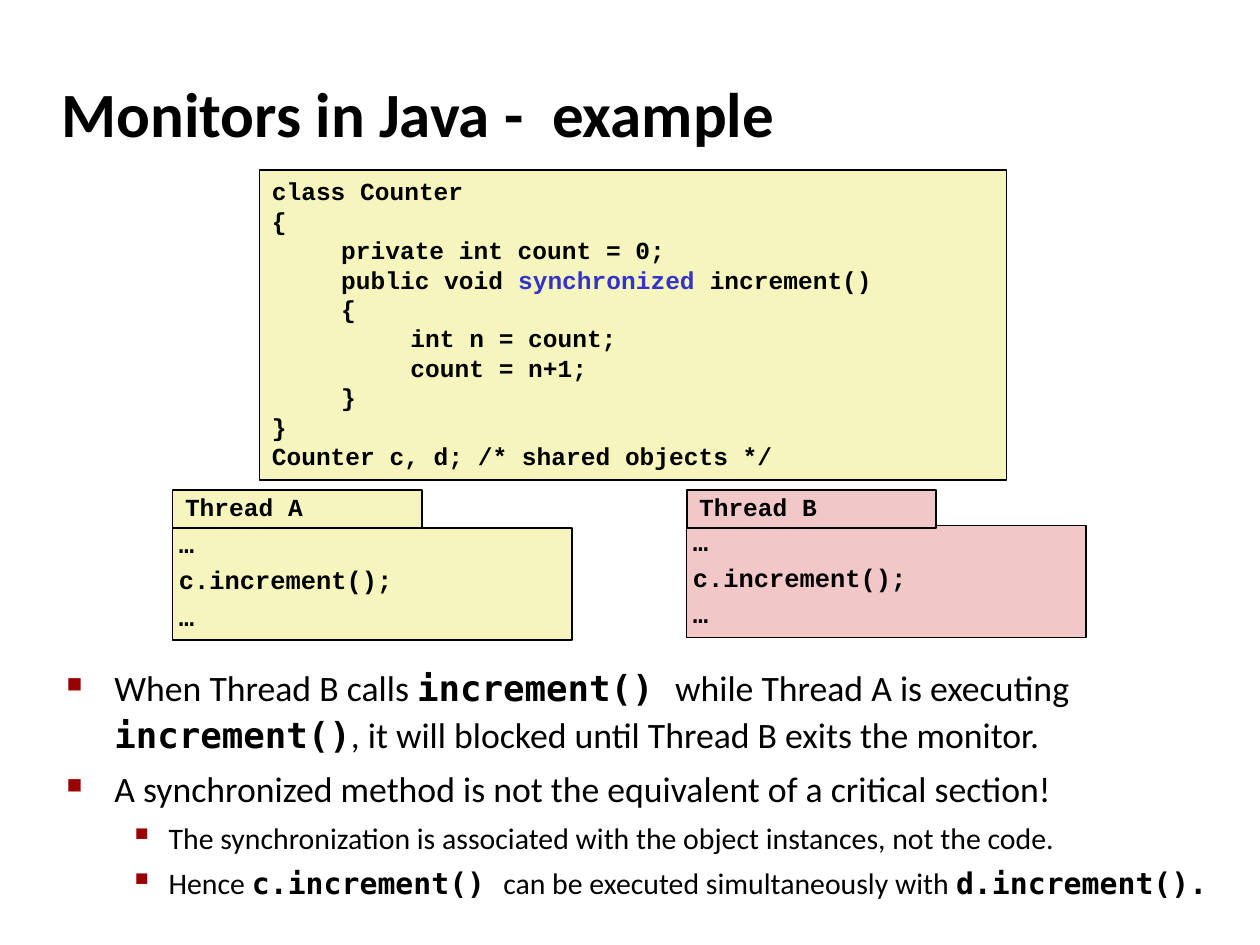
from lxml import etree
from pptx import Presentation
from pptx.dml.color import RGBColor
from pptx.enum.shapes import MSO_SHAPE
from pptx.enum.text import MSO_ANCHOR, PP_ALIGN
from pptx.oxml.ns import qn
from pptx.util import Inches, Pt

RECTANGLE = MSO_SHAPE.RECTANGLE
TOP, MIDDLE = MSO_ANCHOR.TOP, MSO_ANCHOR.MIDDLE
LEFT = PP_ALIGN.LEFT
COLORS = {
    "ink": "000000",
    "keyword": "3333CC",
    "bullet": "990000",
    "yellow": "F6F5BD",
    "pink": "F1C7C7",
}
CODE_FONT = "Courier New"

deck = Presentation()
deck.slide_width, deck.slide_height = Inches(10), Inches(7.5)
COL = deck.slide_width // 100
ROW = deck.slide_height // 75
page = deck.slides.add_slide(deck.slide_layouts[6])


def add_box(left, top, width, height, fill=None, line=0.75, inset=1, anchor=TOP):
    place = (round(left * COL), round(top * ROW), round(width * COL), round(height * ROW))
    if fill:
        box = page.shapes.add_shape(RECTANGLE, *place)
        box.shadow.inherit = False
        box.fill.solid()
        box.fill.fore_color.rgb = RGBColor.from_string(COLORS[fill])
        box.line.color.rgb = RGBColor.from_string(COLORS["ink"])
        box.line.width = Pt(line)
    else:
        box = page.shapes.add_textbox(*place)
    frame = box.text_frame
    frame.word_wrap = True
    frame.vertical_anchor = anchor
    frame.margin_left = frame.margin_right = round(inset * COL)
    frame.margin_top = frame.margin_bottom = ROW // 2
    return box


def add_line(box, text, size=14, font=CODE_FONT, bold=True, spacing=1.0, before=0,
             accent_font=None, accent_color="ink", bullet=None, tabs=()):
    frame = box.text_frame
    para = frame.paragraphs[0]
    if para.runs:
        para = frame.add_paragraph()
    para.alignment = LEFT
    para.line_spacing = spacing
    para.space_before = Pt(before)
    props = para._p.get_or_add_pPr()
    if bullet:
        level, mark, scale, margin, hang = bullet
        para.level = level
        props.set("marL", str(round(margin * COL)))
        props.set("indent", str(round(-hang * COL)))
        tint = etree.SubElement(props, qn("a:buClr"))
        etree.SubElement(tint, qn("a:srgbClr"), val=COLORS["bullet"])
        etree.SubElement(props, qn("a:buSzPct"), val=str(scale * 1000))
        etree.SubElement(props, qn("a:buChar"), char=mark)
    if tabs:
        stops = etree.SubElement(props, qn("a:tabLst"))
        for stop in tabs:
            etree.SubElement(stops, qn("a:tab"), pos=str(round(stop * COL)), algn="l")
    for index, part in enumerate(text.split("`")):
        if not part:
            continue
        accent = index % 2 == 1
        span = para.add_run()
        span.text = part
        span.font.size = Pt(size)
        span.font.bold = bold or accent
        span.font.name = accent_font if accent and accent_font else font
        span.font.color.rgb = RGBColor.from_string(COLORS[accent_color if accent else "ink"])


title = add_box(3.9, 4.8, 83, 8.3, anchor=MIDDLE)
add_line(title, "Monitors in Java -  example", size=36, font="Calibri")

notes = add_box(4.3, 52, 93.9, 20.8)
main_bullet = (0, "■", 60, 3.8, 3.8)
sub_bullet = (1, "▪", 110, 8.1, 3.1)
for text, size, bullet in [
    ("When Thread B calls `increment() `while Thread A is executing `increment()`"
     ", it will blocked until Thread B exits the monitor.", 20.4, main_bullet),
    ("A synchronized method is not the equivalent of a critical section!", 20.4, main_bullet),
    ("The synchronization is associated with the object instances, not the code.",
     17, sub_bullet),
    ("Hence `c.increment() `can be executed simultaneously with `d.increment().`",
     17, sub_bullet),
]:
    add_line(notes, text, size=size, font="Calibri", bold=False, spacing=1.1,
             before=size * 0.2, accent_font="DejaVu Sans Mono", bullet=bullet)

listing = add_box(20.6, 13.5, 59.3, 24.6, fill="yellow")
for text in [
    "class Counter",
    "{",
    "\tprivate int count = 0;",
    "\tpublic void `synchronized` increment()",
    "\t{",
    "\t\tint n = count;",
    "\t\tcount = n+1;",
    "\t}",
    "}",
    "Counter c, d; /* shared objects */",
]:
    add_line(listing, text, accent_color="keyword", tabs=(5.5, 11))

for name, left, top, fill in [
    ("Thread A", 13.7, 41.9, "yellow"),
    ("Thread B", 54.5, 41.7, "pink"),
]:
    thread = add_box(left, top, 31.7, 8.9, fill=fill, inset=0.5)
    for text in ["…", "c.increment();", "…"]:
        add_line(thread, text, size=14.5, spacing=0.8, before=6.8)
    label = add_box(left, 38.9, 19.8, 3, fill=fill, line=1, anchor=MIDDLE)
    add_line(label, name, spacing=0.8, before=6.8)

deck.save("out.pptx")
